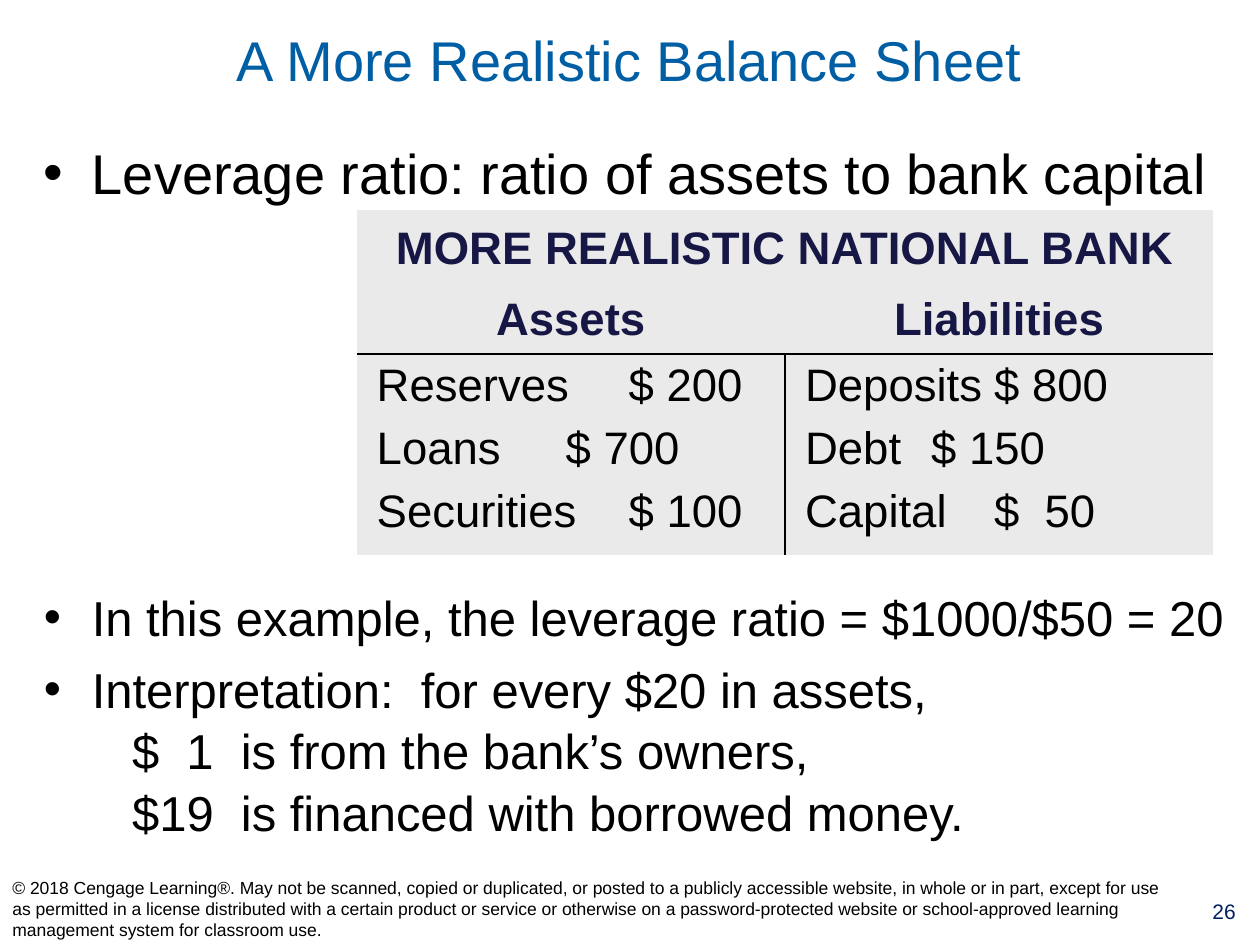
from lxml.etree import SubElement
from pptx import Presentation
from pptx.dml.color import RGBColor
from pptx.enum.text import MSO_ANCHOR, MSO_AUTO_SIZE, PP_ALIGN
from pptx.oxml import parse_xml
from pptx.oxml.ns import nsdecls, qn
from pptx.util import Emu, Inches, Pt

BLACK, BLUE, NAVY, INDIGO, GRAY = "000000", "005EA4", "002060", "171745", "EAEAEA"

TITLE = "A More Realistic Balance Sheet"
DEFINITION = [("Leverage ratio: ratio of assets to bank capital", True)]
# Each line of the example, and whether it carries a bullet
EXAMPLE = [
    ("In this example, the leverage ratio = $1000/$50 = 20", True),
    ("Interpretation:  for every $20 in assets,", True),
    ("$  1  is from the bank’s owners,", False),
    ("$19  is financed with borrowed money.", False),
]
BANK = "MORE REALISTIC NATIONAL BANK"
# Each entry: name, amount, tab position in inches
ACCOUNTS = {
    "Assets": [("Reserves", "$ 200", 2.06), ("Loans ", "$ 700", 2.06),
               ("Securities", "$ 100", 2.06)],
    "Liabilities": [("Deposits", "$ 800", 2.06), ("Debt", "$ 150", 1.06),
                    ("Capital", "$  50", 2.06)],
}
ROW_HEIGHTS = (0.6, 0.54, 1.53)
COPYRIGHT = (
    "© 2018 Cengage Learning®. May not be scanned, copied or duplicated, or posted to a "
    "publicly accessible website, in whole or in part, except for use as permitted in a "
    "license distributed with a certain product or service or otherwise on a "
    "password-protected website or school-approved learning management system for "
    "classroom use."
)
PAGE_NUMBER = "26"


def color(value):
    return RGBColor.from_string(value)


def style(paragraph, size, ink, bold=False, align=PP_ALIGN.LEFT):
    paragraph.alignment = align
    for span in paragraph.runs:
        span.font.name = "Arial"
        span.font.size = Pt(size)
        span.font.bold = bold
        span.font.color.rgb = color(ink)


def add_text(page, left, top, width, height):
    box = page.shapes.add_textbox(*map(Inches, (left, top, width, height)))
    box.text_frame.word_wrap = True
    return box.text_frame


def set_lines(frame, lines):
    """Fill a frame with one paragraph per line and return the paragraphs."""
    frame.text = "\n".join(lines)
    return frame.paragraphs


def indent(paragraph, left, first=0):
    properties = paragraph._p.get_or_add_pPr()
    properties.set("marL", str(Inches(left)))
    properties.set("indent", str(Inches(first)))
    return properties


def add_list(page, top, height, lines, size):
    frame = add_text(page, 0.25, top, 9.75, height)
    paragraphs = set_lines(frame, [text for text, _ in lines])
    for number, (paragraph, (_, bulleted)) in enumerate(zip(paragraphs, lines)):
        paragraph.line_spacing = 1.05
        if bulleted:
            properties = indent(paragraph, 0.38, -0.38)
            SubElement(properties, qn("a:buFont"), typeface="Arial")
            SubElement(properties, qn("a:buChar"), char="•")
            if number:
                paragraph.space_before = Pt(size * 0.2)
        else:
            indent(paragraph, 0.7)
        style(paragraph, size, BLACK)


def set_borders(cell, drawn):
    """Draw the sides named in drawn (letters of LRTB) and clear the others."""
    properties = cell._tc.get_or_add_tcPr()
    for place, side in enumerate("LRTB"):
        fill = (f'<a:solidFill><a:srgbClr val="{BLACK}"/></a:solidFill>'
                if side in drawn else "<a:noFill/>")
        properties.insert(place, parse_xml(
            f'<a:ln{side} {nsdecls("a")} w="{Pt(1)}">{fill}</a:ln{side}>'))


def add_heading(cell, text):
    cell.text = text
    cell.vertical_anchor = MSO_ANCHOR.MIDDLE
    style(cell.text_frame.paragraphs[0], 26, INDIGO, True, PP_ALIGN.CENTER)


def add_entries(cell, entries):
    lines = [f"{name}\t{amount}" for name, amount, _ in entries]
    paragraphs = set_lines(cell.text_frame, lines)
    for number, (paragraph, (_, _, stop)) in enumerate(zip(paragraphs, entries)):
        tabs = SubElement(indent(paragraph, 0.06), qn("a:tabLst"))
        SubElement(tabs, qn("a:tab"), pos=str(Inches(stop)), algn="l")
        if number:
            paragraph.space_before = Pt(7)
        style(paragraph, 26, BLACK)


def add_balance_sheet(page):
    frame = page.shapes.add_table(
        len(ROW_HEIGHTS), len(ACCOUNTS), Inches(2.83), Inches(1.67),
        Inches(6.8), Inches(sum(ROW_HEIGHTS)))
    table = frame.table
    table.first_row = table.horz_banding = False
    for row, height in zip(table.rows, ROW_HEIGHTS):
        row.height = Inches(height)
    for cell in table.iter_cells():
        cell.fill.solid()
        cell.fill.fore_color.rgb = color(GRAY)

    table.cell(0, 0).merge(table.cell(0, 1))
    add_heading(table.cell(0, 0), BANK)
    for column, (heading, entries) in enumerate(ACCOUNTS.items()):
        add_heading(table.cell(1, column), heading)
        add_entries(table.cell(2, column), entries)
        for row, drawn in enumerate(("", "B", ("TR", "TL")[column])):
            set_borders(table.cell(row, column), drawn)


def add_title(page):
    title = page.shapes.title
    title.left, title.top, title.width, title.height = map(
        Inches, (0.73, 0.11, 8.53, 0.72))
    frame = title.text_frame
    frame.text = TITLE
    frame.word_wrap = False
    frame.auto_size = MSO_AUTO_SIZE.NONE
    frame.vertical_anchor = MSO_ANCHOR.MIDDLE
    style(frame.paragraphs[0], 32, BLUE, align=PP_ALIGN.CENTER)


def add_footer(page):
    number = add_text(page, 9.43, 7.08, 0.57, 0.41)
    number.text = PAGE_NUMBER
    style(number.paragraphs[0], 12, NAVY, align=PP_ALIGN.CENTER)
    notice = add_text(page, 0, 6.92, 9.41, 0.58)
    notice.text = COPYRIGHT
    notice.vertical_anchor = MSO_ANCHOR.MIDDLE
    style(notice.paragraphs[0], 10, BLACK)


def main():
    deck = Presentation()
    deck.slide_width, deck.slide_height = Inches(10), Inches(7.5)
    page = deck.slides.add_slide(deck.slide_layouts.get_by_name("Title Only"))
    add_title(page)
    add_list(page, 1.02, 0.62, DEFINITION, 32)
    add_list(page, 4.59, 2.1, EXAMPLE, 28)
    add_footer(page)
    add_balance_sheet(page)
    deck.save("out.pptx")


if __name__ == "__main__":
    main()
